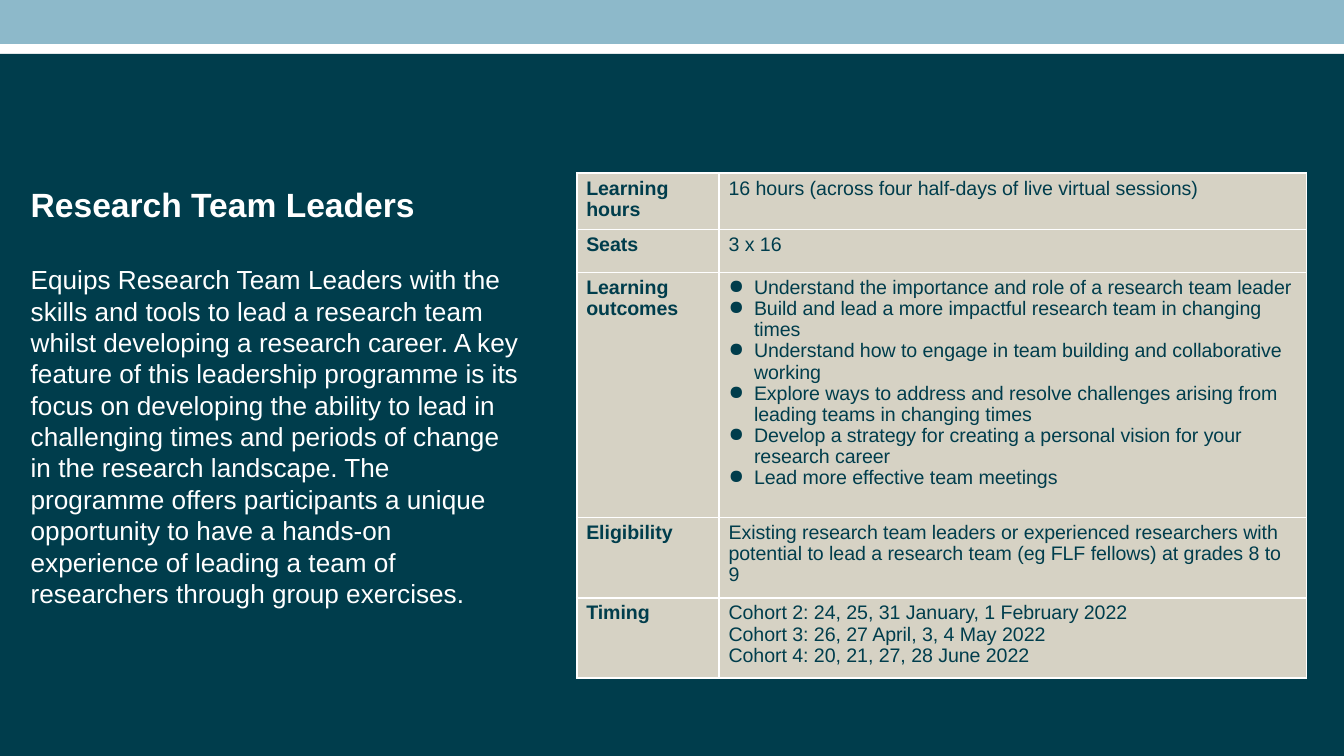
import pptx
import pptx.util
import pptx.dml.color
import pptx.enum.shapes
import pptx.enum.text
import pptx.oxml.ns
from lxml import etree

Cm = pptx.util.Cm
Pt = pptx.util.Pt
RGBColor = pptx.dml.color.RGBColor

WHITE = RGBColor(0xFF, 0xFF, 0xFF)
SKY = RGBColor(0x8D, 0xB9, 0xCA)
TEAL = RGBColor(0x00, 0x3D, 0x4C)
STONE = RGBColor(0xD6, 0xD2, 0xC4)
FONT = "Arial"
BULLET = "●"

HEADING = "Research Team Leaders"
SUMMARY = (
    "Equips Research Team Leaders with the skills and tools to lead a research team "
    "whilst developing a research career. A key feature of this leadership programme "
    "is its focus on developing the ability to lead in challenging times and periods "
    "of change in the research landscape. The programme offers participants a unique "
    "opportunity to have a hands-on experience of leading a team of researchers "
    "through group exercises."
)
OUTCOMES = [
    "Understand the importance and role of a research team leader",
    "Build and lead a more impactful research team in changing times",
    "Understand how to engage in team building and collaborative working",
    "Explore ways to address and resolve challenges arising from leading teams in changing times",
    "Develop a strategy for creating a personal vision for your research career",
    "Lead more effective team meetings",
]
COHORTS = [
    "Cohort 2: 24, 25, 31 January, 1 February 2022",
    "Cohort 3: 26, 27 April, 3, 4 May 2022",
    "Cohort 4: 20, 21, 27, 28 June 2022",
]
FACTS = [
    ("Learning hours", ["16 hours (across four half-days of live virtual sessions)"], 1.07),
    ("Seats", ["3 x 16"], 0.81),
    ("Learning outcomes", OUTCOMES, 4.63),
    ("Eligibility", ["Existing research team leaders or experienced researchers with "
                     "potential to lead a research team (eg FLF fellows) at grades 8 to 9"], 1.52),
    ("Timing", COHORTS, 1.52),
]


class SlideBuilder:
    def __init__(self, slide):
        self.slide = slide

    def band(self, top, height, color):
        band = self.slide.shapes.add_shape(
            pptx.enum.shapes.MSO_SHAPE.RECTANGLE, 0, Cm(top), Cm(25.4), Cm(height))
        band.shadow.inherit = False
        band.fill.solid()
        band.fill.fore_color.rgb = color
        band.line.fill.background()

    def style(self, paragraph, size, color, bold=False):
        paragraph.alignment = pptx.enum.text.PP_ALIGN.LEFT
        for run in paragraph.runs:
            run.font.name = FONT
            run.font.size = Pt(size)
            run.font.bold = bold
            run.font.color.rgb = color

    def title(self, left, top, width, height, heading, summary):
        title = self.slide.shapes.title
        title.left, title.top, title.width, title.height = map(Cm, (left, top, width, height))
        frame = title.text_frame
        frame.word_wrap = True
        frame.auto_size = pptx.enum.text.MSO_AUTO_SIZE.NONE
        frame.vertical_anchor = pptx.enum.text.MSO_ANCHOR.TOP
        frame.margin_left = frame.margin_right = Cm(0.25)
        frame.margin_top = Cm(0.18)
        frame.text = heading
        self.style(frame.paragraphs[0], 18, WHITE, bold=True)
        description = frame.add_paragraph()
        description.text = summary
        description.space_before = Pt(21)
        description.line_spacing = Pt(16.8)
        self.style(description, 14, WHITE)

    def bullet(self, paragraph):
        properties = paragraph._p.get_or_add_pPr()
        properties.set("marL", str(Cm(0.48)))
        properties.set("indent", str(-Cm(0.48)))
        etree.SubElement(properties, pptx.oxml.ns.qn("a:buChar"), char=BULLET)

    def borders(self, cell):
        properties = cell._tc.get_or_add_tcPr()
        for position, side in enumerate(("lnL", "lnR", "lnT", "lnB")):
            line = etree.Element(pptx.oxml.ns.qn("a:" + side), w=str(Pt(1)))
            fill = etree.SubElement(line, pptx.oxml.ns.qn("a:solidFill"))
            etree.SubElement(fill, pptx.oxml.ns.qn("a:srgbClr"), val=str(WHITE))
            properties.insert(position, line)

    def cell(self, cell, lines, bold=False, bulleted=False):
        cell.fill.solid()
        cell.fill.fore_color.rgb = STONE
        cell.margin_left = cell.margin_right = Cm(0.18)
        cell.margin_top = cell.margin_bottom = Cm(0.1)
        cell.text_frame.text = "\n".join(lines)
        for paragraph in cell.text_frame.paragraphs:
            paragraph.line_spacing = 0.97
            if bulleted:
                self.bullet(paragraph)
            self.style(paragraph, 10.5, TEAL, bold)
        self.borders(cell)

    def table(self, left, top, widths, facts):
        height = sum(fact[2] for fact in facts)
        table = self.slide.shapes.add_table(
            len(facts), len(widths), Cm(left), Cm(top), Cm(sum(widths)), Cm(height)).table
        table.first_row = table.horz_banding = False
        for column, width in zip(table.columns, widths):
            column.width = Cm(width)
        for row, (label, details, row_height) in zip(table.rows, facts):
            row.height = Cm(row_height)
            self.cell(row.cells[0], [label], bold=True)
            self.cell(row.cells[1], details, bulleted=details is OUTCOMES)


def main():
    presentation = pptx.Presentation()
    presentation.slide_width = Cm(25.4)
    presentation.slide_height = Cm(14.29)
    builder = SlideBuilder(presentation.slides.add_slide(presentation.slide_layouts[5]))
    builder.band(0, 0.83, SKY)
    builder.band(1.02, 13.27, TEAL)
    builder.table(10.9, 3.27, (2.69, 11.1), FACTS)
    builder.title(0.33, 3.3, 9.86, 9.14, HEADING, SUMMARY)
    tree = builder.slide.shapes._spTree
    tree.append(builder.slide.shapes.title._element)
    presentation.save("out.pptx")


if __name__ == "__main__":
    main()
